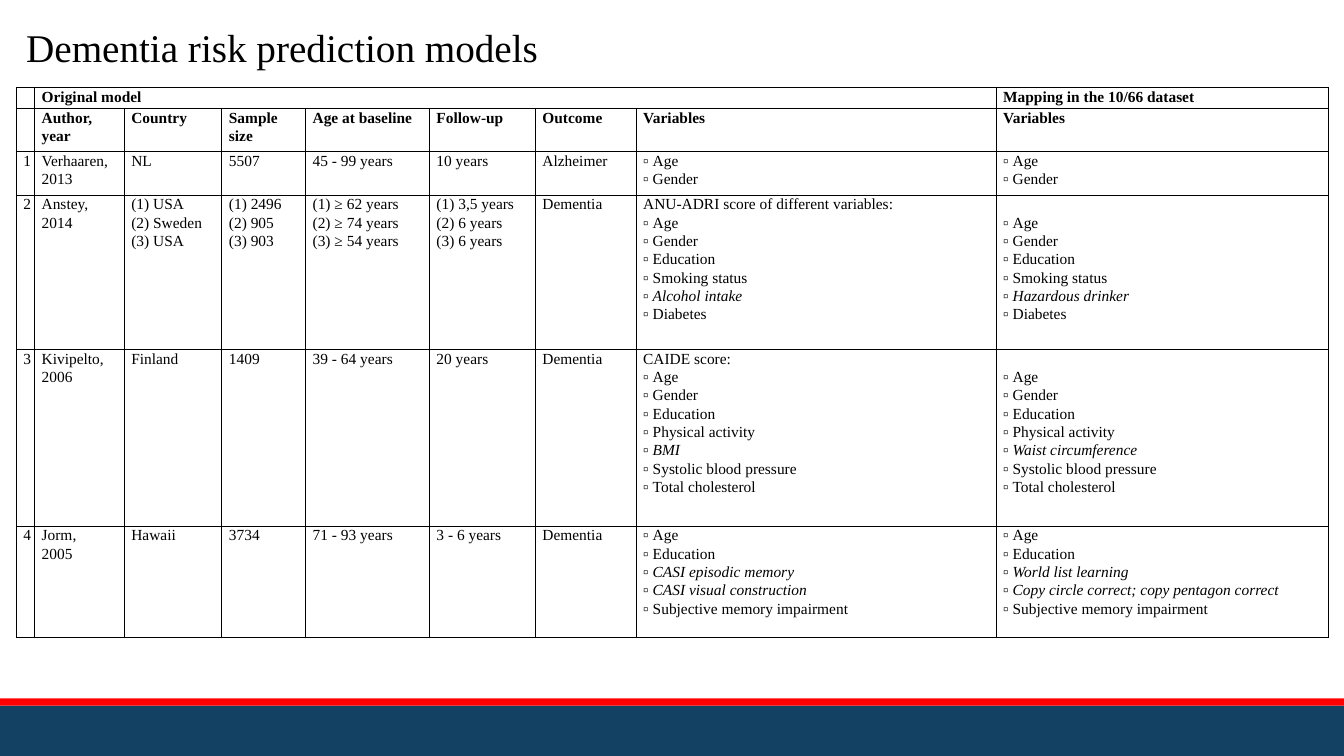
from dataclasses import dataclass

from lxml import etree
from pptx import Presentation
from pptx.dml.color import RGBColor
from pptx.enum.shapes import MSO_SHAPE
from pptx.enum.text import MSO_ANCHOR, PP_ALIGN
from pptx.oxml.ns import qn
from pptx.util import Cm, Pt

RECTANGLE = MSO_SHAPE.RECTANGLE
TOP = MSO_ANCHOR.TOP
LEFT = PP_ALIGN.LEFT

SLIDE_WIDTH, SLIDE_HEIGHT = 33.87, 19.05
BAND_HEIGHT, STRIPE_HEIGHT = 1.27, 0.18
CONTENT_LEFT = 0.41
LINE_HEIGHT = 0.46
COLUMN_WIDTHS = [0.46, 2.26, 2.46, 2.11, 3.12, 2.67, 2.54, 9.07, 8.38]
ROW_HEIGHTS = [0.53, 1.09, 1.09, 3.89, 4.45, 2.82]
BULLET, ITALIC = "▫", "*"


@dataclass(frozen=True)
class Theme:
    font: str = "Times New Roman"
    text: str = "000000"
    band: str = "124163"
    stripe: str = "FF0000"
    title_size: float = 28
    table_size: float = 11
    line_spacing: float = 1.07
    border_width: float = 0.5


def bullets(*items):
    return [f"{BULLET}{item}" for item in items]


HEADERS = ["", "Author, year", "Country", "Sample size", "Age at baseline",
           "Follow-up", "Outcome", "Variables", "Variables"]
MODELS = [
    ["1", "Verhaaren, 2013", "NL", "5507", "45 - 99 years", "10 years", "Alzheimer",
     bullets("Age", "Gender"),
     bullets("Age", "Gender")],
    ["2", "Anstey, 2014",
     ["(1) USA", "(2) Sweden", "(3) USA"],
     ["(1) 2496", "(2) 905", "(3) 903"],
     ["(1) ≥ 62 years", "(2) ≥ 74 years", "(3) ≥ 54 years"],
     ["(1) 3,5 years", "(2) 6 years", "(3) 6 years"],
     "Dementia",
     ["ANU-ADRI score of different variables:"]
     + bullets("Age", "Gender", "Education", "Smoking status", "*Alcohol intake", "Diabetes"),
     bullets("Age", "Gender", "Education", "Smoking status", "*Hazardous drinker", "Diabetes")],
    ["3", "Kivipelto, 2006", "Finland", "1409", "39 - 64 years", "20 years", "Dementia",
     ["CAIDE score:"]
     + bullets("Age", "Gender", "Education", "Physical activity", "*BMI",
               "Systolic blood pressure", "Total cholesterol"),
     bullets("Age", "Gender", "Education", "Physical activity", "*Waist circumference",
             "Systolic blood pressure", "Total cholesterol")],
    ["4", ["Jorm,", "2005"], "Hawaii", "3734", "71 - 93 years", "3 - 6 years", "Dementia",
     bullets("Age", "Education", "*CASI episodic memory", "*CASI visual construction",
             "Subjective memory impairment"),
     bullets("Age", "Education", "*World list learning",
             "*Copy circle correct; copy pentagon correct",
             "Subjective memory impairment")],
]
GROUPS = ["", "Original model"] + [""] * 6 + ["Mapping in the 10/66 dataset"]


def write(paragraph, text, *, font, size, color, bold=False, italic=False,
          bullet=None, line_spacing=None):
    paragraph.alignment = LEFT
    if line_spacing:
        paragraph.line_spacing = line_spacing
    if bullet:
        properties = paragraph._p.get_or_add_pPr()
        properties.set("marL", str(Cm(0.24)))
        properties.set("indent", str(-Cm(0.24)))
        etree.SubElement(properties, qn("a:buFont"), typeface=font)
        etree.SubElement(properties, qn("a:buChar"), char=bullet)
    if not text:
        etree.SubElement(paragraph._p, qn("a:endParaRPr"), sz=str(int(size * 100)))
        return
    run = paragraph.add_run()
    run.text = text
    run.font.name = font
    run.font.size = Pt(size)
    run.font.color.rgb = RGBColor.from_string(color)
    run.font.bold = bold
    run.font.italic = italic


class SlideBuilder:
    """Draws styled elements on one slide."""

    def __init__(self, slide, theme):
        self.slide = slide
        self.theme = theme

    def bar(self, top, height, color):
        shape = self.slide.shapes.add_shape(
            RECTANGLE, Cm(0), Cm(top), Cm(SLIDE_WIDTH), Cm(height))
        shape.shadow.inherit = False
        shape.fill.solid()
        shape.fill.fore_color.rgb = RGBColor.from_string(color)
        shape.line.fill.background()

    def title(self, text, left, top, width, height):
        shape = self.slide.shapes.add_textbox(Cm(left), Cm(top), Cm(width), Cm(height))
        shape.text_frame.word_wrap = True
        write(shape.text_frame.paragraphs[0], text, font=self.theme.font,
              size=self.theme.title_size, color=self.theme.text)

    def border(self, cell):
        properties = cell._tc.get_or_add_tcPr()
        for side in ("lnL", "lnR", "lnT", "lnB"):
            line = etree.SubElement(properties, qn(f"a:{side}"),
                                    w=str(Pt(self.theme.border_width)))
            fill = etree.SubElement(line, qn("a:solidFill"))
            etree.SubElement(fill, qn("a:srgbClr"), val=self.theme.text)

    def cell(self, cell, content, bold, skipped_lines):
        self.border(cell)
        cell.fill.background()
        cell.vertical_anchor = TOP
        cell.margin_left = cell.margin_right = Cm(0.18)
        cell.margin_top = Cm(skipped_lines * LINE_HEIGHT)
        cell.margin_bottom = Cm(0)
        lines = content if isinstance(content, list) else [content]
        for index, line in enumerate(lines):
            frame = cell.text_frame
            paragraph = frame.add_paragraph() if index else frame.paragraphs[0]
            bullet = BULLET if line.startswith(BULLET) else None
            text = line.removeprefix(BULLET)
            write(paragraph, text.removeprefix(ITALIC), font=self.theme.font,
                  size=self.theme.table_size, color=self.theme.text, bold=bold,
                  italic=text.startswith(ITALIC), bullet=bullet,
                  line_spacing=self.theme.line_spacing)

    def table(self, rows, left, top, header_rows):
        table = self.slide.shapes.add_table(
            len(rows), len(COLUMN_WIDTHS), Cm(left), Cm(top),
            Cm(sum(COLUMN_WIDTHS)), Cm(sum(ROW_HEIGHTS))).table
        table.first_row = table.horz_banding = False
        for column, width in zip(table.columns, COLUMN_WIDTHS):
            column.width = Cm(width)
        for row, height in zip(table.rows, ROW_HEIGHTS):
            row.height = Cm(height)
        for row_index, row in enumerate(rows):
            has_score = isinstance(row[-2], list) and not row[-2][0].startswith(BULLET)
            for column_index, content in enumerate(row):
                is_mapping = column_index == len(row) - 1
                self.cell(table.cell(row_index, column_index), content,
                          bold=row_index < header_rows,
                          skipped_lines=int(has_score and is_mapping))
        table.cell(0, 1).merge(table.cell(0, len(COLUMN_WIDTHS) - 2))


def main():
    presentation = Presentation()
    presentation.slide_width = Cm(SLIDE_WIDTH)
    presentation.slide_height = Cm(SLIDE_HEIGHT)
    theme = Theme()
    builder = SlideBuilder(presentation.slides.add_slide(presentation.slide_layouts[6]), theme)
    band_top = SLIDE_HEIGHT - BAND_HEIGHT
    builder.bar(band_top, BAND_HEIGHT, theme.band)
    builder.bar(band_top - STRIPE_HEIGHT, STRIPE_HEIGHT, theme.stripe)
    builder.table([GROUPS, HEADERS] + MODELS, CONTENT_LEFT, 2.2, header_rows=2)
    builder.title("Dementia risk prediction models", CONTENT_LEFT, 0.46, 19.96, 1.45)
    presentation.save("out.pptx")


if __name__ == "__main__":
    main()
